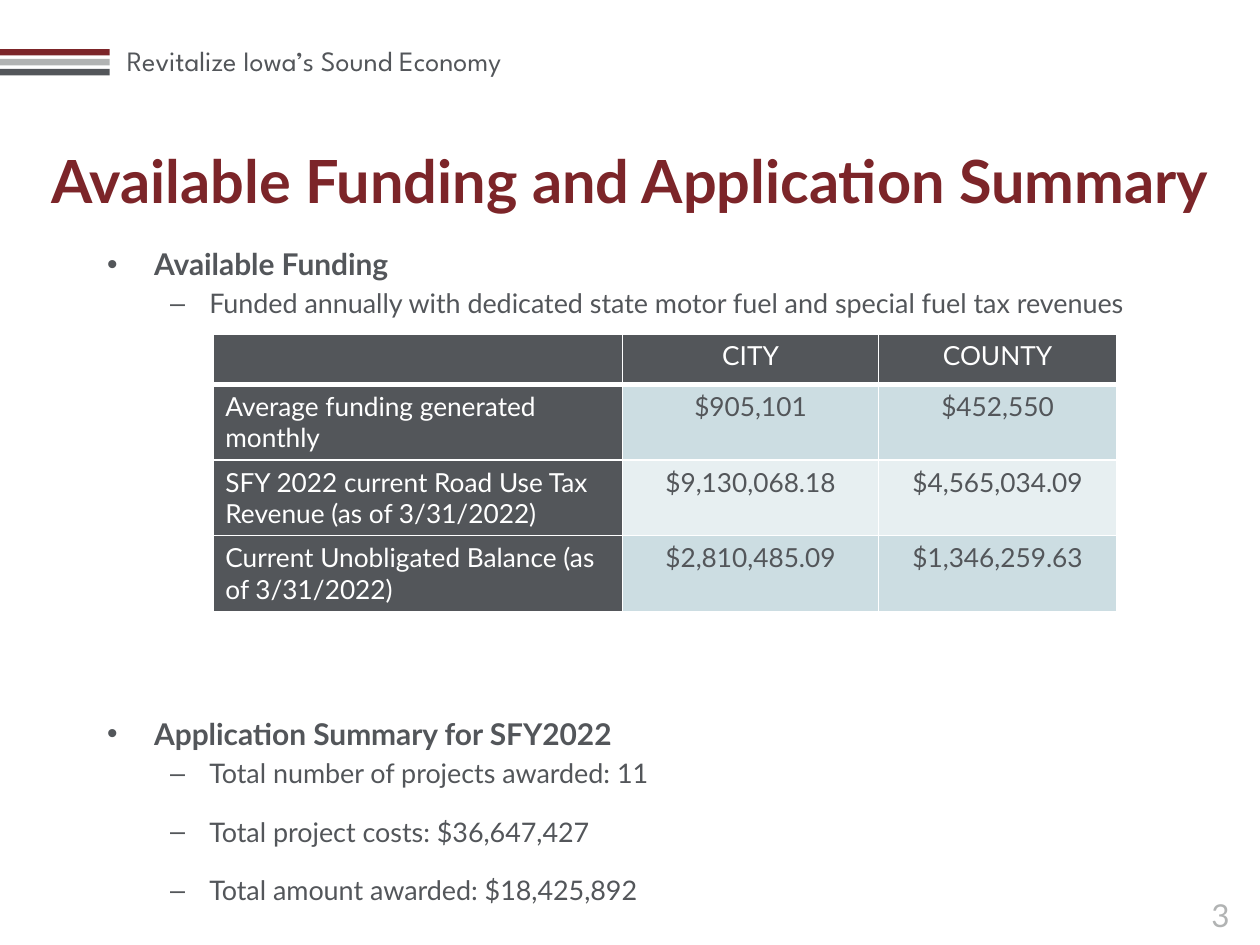
from dataclasses import dataclass

from lxml import etree
from pptx import Presentation
from pptx import util as u
from pptx.dml.color import RGBColor
from pptx.enum import shapes, text
from pptx.oxml.ns import qn


@dataclass(frozen=True)
class Theme:
    maroon: str = "7C2529"
    silver: str = "B1B3B3"
    slate: str = "53565A"
    white: str = "FFFFFF"
    band_dark: str = "CCDDE2"
    band_light: str = "E7EFF1"
    body_font: str = "Lato"
    header_font: str = "League Spartan"
    title_size: float = 34
    number_size: float = 18
    heading_size: float = 17.1
    header_size: float = 16
    item_size: float = 15.4
    table_size: float = 15


THEME = Theme()
CENTER = text.PP_ALIGN.CENTER
LEFT = text.PP_ALIGN.LEFT

FUNDING_ITEMS = [
    "Funded annually with dedicated state motor fuel and special fuel tax revenues",
]
SUMMARY_ITEMS = [
    "Total number of projects awarded: 11",
    "Total project costs: $36,647,427",
    "Total amount awarded: $18,425,892",
]
FUNDING_ROWS = [
    ("", "CITY", "COUNTY"),
    ("Average funding generated monthly", "$905,101", "$452,550"),
    ("SFY 2022 current Road Use Tax Revenue (as of 3/31/2022)",
     "$9,130,068.18", "$4,565,034.09"),
    ("Current Unobligated Balance (as of 3/31/2022)",
     "$2,810,485.09", "$1,346,259.63"),
]


def format_runs(paragraph, size, color, font=THEME.body_font, bold=False):
    for run in paragraph.runs:
        run.font.name = font
        run.font.size = u.Pt(size)
        run.font.bold = bold
        run.font.color.rgb = RGBColor.from_string(color)


def add_box(slide, left, top, width, height):
    box = slide.shapes.add_textbox(u.Cm(left), u.Cm(top), u.Cm(width), u.Cm(height))
    box.text_frame.word_wrap = True
    return box.text_frame


def add_label(slide, place, words, size, color, alignment=LEFT, **style):
    frame = add_box(slide, *place)
    frame.text = words
    frame.vertical_anchor = text.MSO_ANCHOR.MIDDLE
    frame.paragraphs[0].alignment = alignment
    format_runs(frame.paragraphs[0], size, color, **style)


def add_stripes(slide):
    for index, color in enumerate((THEME.maroon, THEME.silver, THEME.slate)):
        stripe = slide.shapes.add_shape(
            shapes.MSO_SHAPE.RECTANGLE,
            u.Cm(0), u.Cm(0.99 + 0.2 * index), u.Cm(2.21), u.Cm(0.13))
        stripe.shadow.inherit = False
        stripe.fill.solid()
        stripe.fill.fore_color.rgb = RGBColor.from_string(color)
        stripe.line.fill.background()


def set_bullet(paragraph, symbol, margin, hanging):
    properties = paragraph._p.get_or_add_pPr()
    properties.set("marL", str(u.Cm(margin)))
    properties.set("indent", str(-u.Cm(hanging)))
    font = etree.SubElement(properties, qn("a:buFont"))
    font.set("typeface", "Arial")
    etree.SubElement(properties, qn("a:buChar")).set("char", symbol)


def add_section(slide, top, height, heading, items):
    """Add a bold bulleted heading with dashed items below it."""
    frame = add_box(slide, 1.91, top, 21.59, height)
    frame.text = heading
    set_bullet(frame.paragraphs[0], "•", 0.95, 0.95)
    format_runs(frame.paragraphs[0], THEME.heading_size, THEME.slate, bold=True)
    for item in items:
        paragraph = frame.add_paragraph()
        paragraph.text = item
        paragraph.level = 1
        set_bullet(paragraph, "–", 2.06, 0.79)
        paragraph.space_before = u.Pt(3)
        paragraph.space_after = u.Pt(12)
        format_runs(paragraph, THEME.item_size, THEME.slate)


def set_borders(cell, **widths):
    """Draw white borders; widths in points are given by side: L, R, T, B."""
    properties = cell._tc.get_or_add_tcPr()
    for side, width in widths.items():
        line = etree.SubElement(properties, qn(f"a:ln{side}"))
        line.set("w", str(u.Pt(width)))
        fill = etree.SubElement(line, qn("a:solidFill"))
        etree.SubElement(fill, qn("a:srgbClr")).set("val", THEME.white)


def add_funding_table(slide):
    widths = (8.26, 5.16, 4.8)
    heights = (0.99, 1.52, 1.52, 1.52)
    table = slide.shapes.add_table(
        len(heights), len(widths), u.Cm(4.29), u.Cm(6.73),
        u.Cm(sum(widths)), u.Cm(sum(heights))).table
    for column, width in zip(table.columns, widths):
        column.width = u.Cm(width)
    for row, height in zip(table.rows, heights):
        row.height = u.Cm(height)

    for r, values in enumerate(FUNDING_ROWS):
        for c, value in enumerate(values):
            cell = table.cell(r, c)
            is_header = r == 0 or c == 0
            band = THEME.band_dark if r % 2 else THEME.band_light
            set_borders(cell, L=1, R=1, T=3 if r == 1 else 1, B=3 if r == 0 else 1)
            cell.fill.solid()
            cell.fill.fore_color.rgb = RGBColor.from_string(
                THEME.slate if is_header else band)
            cell.text_frame.text = value
            paragraph = cell.text_frame.paragraphs[0]
            paragraph.alignment = CENTER if c else LEFT
            format_runs(paragraph, THEME.table_size,
                        THEME.white if is_header else THEME.slate)


def main():
    presentation = Presentation()
    presentation.slide_width = u.Cm(25.4)
    presentation.slide_height = u.Cm(19.05)
    slide = presentation.slides.add_slide(presentation.slide_layouts[6])

    add_label(slide, (2.31, 0.74, 10.39, 0.94), "Revitalize Iowa’s Sound Economy",
              THEME.header_size, THEME.slate, font=THEME.header_font)
    add_stripes(slide)
    add_label(slide, (23.5, 17.93, 2.21, 1.02), "3",
              THEME.number_size, THEME.silver, CENTER)
    add_label(slide, (0.3, 3.12, 24.79, 0.99),
              "Available Funding and Application Summary",
              THEME.title_size, THEME.maroon, CENTER, bold=True)
    add_section(slide, 4.83, 1.9, "Available Funding", FUNDING_ITEMS)
    add_section(slide, 14.3, 4.7, "Application Summary for SFY2022", SUMMARY_ITEMS)
    add_funding_table(slide)

    presentation.save("out.pptx")


if __name__ == "__main__":
    main()
